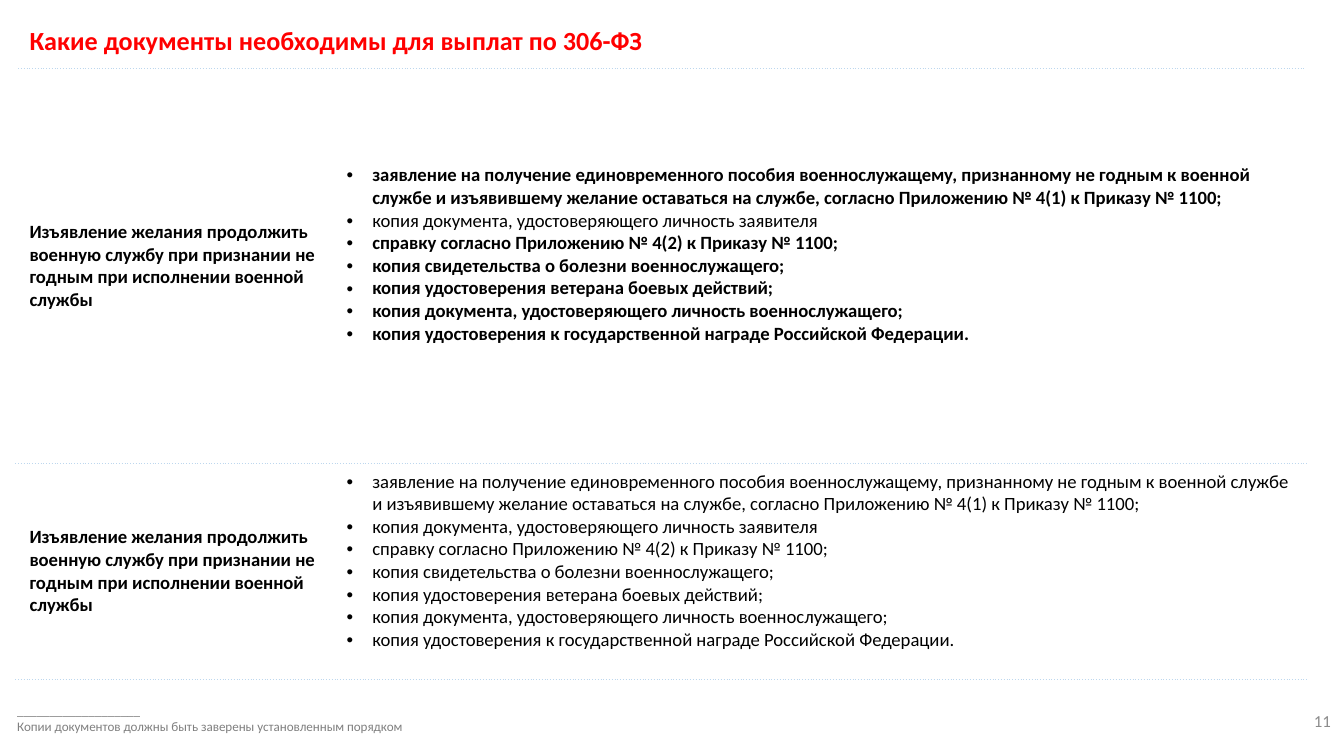
from lxml.etree import SubElement as Sub
from pptx import Presentation
from pptx.dml.color import RGBColor as RGB
from pptx.enum.text import MSO_ANCHOR as Anchor, PP_ALIGN as Align
from pptx.oxml import parse_xml
from pptx.oxml.ns import nsdecls, qn
from pptx.util import Inches, Pt

WIDE = 10
HIGH = WIDE * 9 / 16
COLS, ROWS = (2.36, 7.24), (2.94, 1.31)
HEAD = "Какие документы необходимы для выплат по 306-ФЗ"
CASE = ("Изъявление желания продолжить военную службу при признании "
        "не годным при исполнении военной службы")
DOCS = (
    "заявление на получение единовременного пособия военнослужащему, "
    "признанному не годным к военной службе и изъявившему желание оставаться "
    "на службе, согласно Приложению № 4(1) к Приказу № 1100;",
    "копия документа, удостоверяющего личность заявителя",
    "справку согласно Приложению № 4(2) к Приказу № 1100;",
    "копия свидетельства о болезни военнослужащего;",
    "копия удостоверения ветерана боевых действий;",
    "копия документа, удостоверяющего личность военнослужащего;",
    "копия удостоверения к государственной награде Российской Федерации.",
)
NOTE = ("_" * 19, "Копии документов должны быть заверены установленным порядком")
PLAIN = {1}
EDGES = (("L", "FFFFFF", 1, "solid"), ("R", "FFFFFF", 1, "solid"),
         ("T", "BDD7EE", 0.25, "sysDot"), ("B", "BDD7EE", 0.25, "sysDot"))


def color(code):
    """Turn a hex string into a colour."""
    return RGB.from_string(code)


def place(shape, left, top, width, height):
    """Set a shape's box in inches."""
    shape.left, shape.top = Inches(left), Inches(top)
    shape.width, shape.height = Inches(width), Inches(height)


def bullet(para):
    """Give a paragraph a hanging bullet."""
    props = para._p.get_or_add_pPr()
    props.set("marL", str(Inches(0.19)))
    props.set("indent", str(-Inches(0.19)))
    Sub(props, qn("a:buFont"), typeface="Arial")
    Sub(props, qn("a:buChar"), char="•")


def write(frame, lines, size=10, ink="000000", bold=False, align=Align.LEFT,
          space=None, dots=False, plain=()):
    """Fill a text frame with formatted paragraphs."""
    for num, line in enumerate(lines):
        para = frame.add_paragraph() if num else frame.paragraphs[0]
        if dots:
            bullet(para)
        para.alignment, para.line_spacing = align, space
        run = para.add_run()
        run.text = line
        font = run.font
        font.name, font.size = "Calibri", Pt(size)
        font.bold = bold and num not in plain
        font.color.rgb = color(ink)


def label(slide, box, lines, wrap=True, anchor=Anchor.TOP, **form):
    """Add a text box."""
    frame = slide.shapes.add_textbox(*map(Inches, box)).text_frame
    frame.word_wrap, frame.vertical_anchor = wrap, anchor
    write(frame, lines, **form)


def style(cell):
    """Set a cell's fill, anchor and borders."""
    cell.fill.solid()
    cell.fill.fore_color.rgb = color("FFFFFF")
    cell.vertical_anchor = Anchor.MIDDLE
    props = cell._tc.get_or_add_tcPr()
    for num, (side, ink, size, dash) in enumerate(EDGES):
        props.insert(num, parse_xml(
            f'<a:ln{side} {nsdecls("a")} w="{Pt(size)}"><a:solidFill>'
            f'<a:srgbClr val="{ink}"/></a:solidFill>'
            f'<a:prstDash val="{dash}"/></a:ln{side}>'))


def grid(slide, *box):
    """Add the table of cases and their documents."""
    shape = slide.shapes.add_table(len(ROWS), len(COLS), *map(Inches, box))
    table = shape.table
    table.first_row = table.horz_banding = False
    for col, width in zip(table.columns, COLS):
        col.width = Inches(width)
    for num, (row, height) in enumerate(zip(table.rows, ROWS)):
        row.height = Inches(height)
        case, docs = row.cells
        style(case)
        style(docs)
        docs.margin_bottom = Inches(0.22)
        write(case.text_frame, [CASE], bold=True)
        write(docs.text_frame, DOCS, bold=num == 0, dots=True, plain=PLAIN)
    place(shape, *box)


def title(slide, text):
    """Place and format the title."""
    shape = slide.shapes.title
    place(shape, 0.12, 0.14, 9.4, 0.34)
    shape.text_frame.vertical_anchor = Anchor.MIDDLE
    write(shape.text_frame, [text], size=14, ink="FF0000", bold=True, space=0.9)


def main():
    """Build and save the slide."""
    deck = Presentation()
    deck.slide_width, deck.slide_height = Inches(WIDE), Inches(HIGH)
    slide = deck.slides.add_slide(deck.slide_layouts[5])
    title(slide, HEAD)
    label(slide, (7.75, 5.21, 2.25, 0.3), ["11"], anchor=Anchor.MIDDLE,
          size=9, ink="8C8C8C", align=Align.RIGHT)
    grid(slide, 0.12, 0.51, 9.61, 4.54)
    label(slide, (0.03, 5.18, 3.39, 0.34), NOTE, wrap=False, size=7, ink="808080")
    deck.save("out.pptx")


if __name__ == "__main__":
    main()
